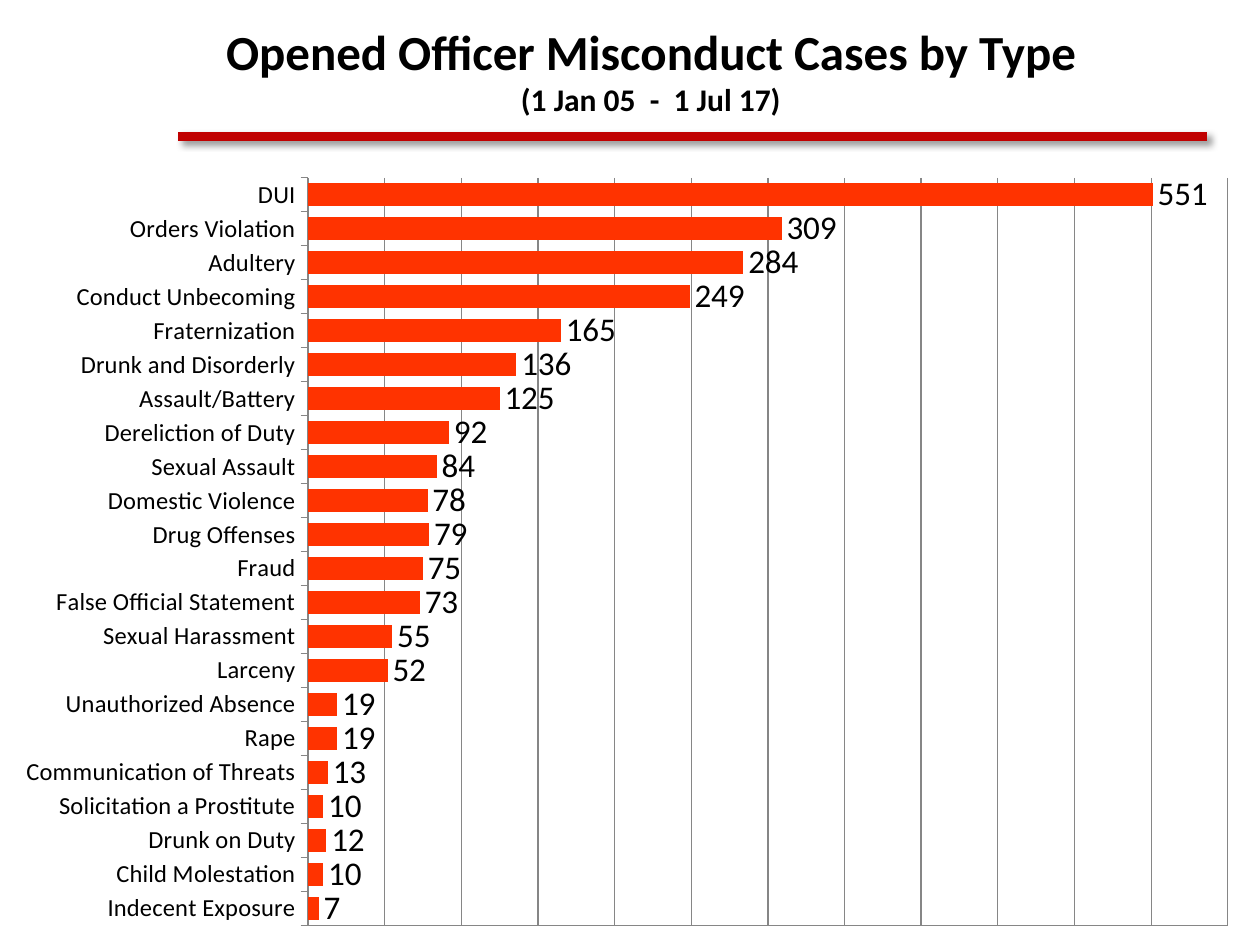
from typing import NamedTuple

from lxml import etree
from pptx import Presentation
from pptx.chart.data import CategoryChartData
from pptx.dml.color import RGBColor
from pptx.enum.chart import (XL_CHART_TYPE, XL_LABEL_POSITION, XL_TICK_LABEL_POSITION,
                             XL_TICK_MARK)
from pptx.enum.shapes import MSO_CONNECTOR
from pptx.enum.text import MSO_ANCHOR, PP_ALIGN
from pptx.oxml import parse_xml
from pptx.oxml.ns import nsdecls, qn
from pptx.util import Pt

BAR_CLUSTERED = XL_CHART_TYPE.BAR_CLUSTERED
OUTSIDE_END = XL_LABEL_POSITION.OUTSIDE_END
NO_LABELS = XL_TICK_LABEL_POSITION.NONE
TICK_NONE, TICK_IN, TICK_OUT = XL_TICK_MARK.NONE, XL_TICK_MARK.INSIDE, XL_TICK_MARK.OUTSIDE
STRAIGHT = MSO_CONNECTOR.STRAIGHT
MIDDLE = MSO_ANCHOR.MIDDLE
CENTER = PP_ALIGN.CENTER

BLACK = RGBColor(0x00, 0x00, 0x00)
RULE_RED = RGBColor(0xC0, 0x00, 0x00)
BAR_RED = RGBColor(0xFF, 0x33, 0x00)
GRAY = RGBColor(0x86, 0x86, 0x86)
FONT = "Calibri"


class TitleLine(NamedTuple):
    text: str
    size: float


class CaseType(NamedTuple):
    name: str
    count: int


TITLE = [
    TitleLine("Opened Officer Misconduct Cases by Type", 28),
    TitleLine("(1 Jan 05  -  1 Jul 17)", 18),
]

# Listed from the top bar down
CASES = [
    CaseType("DUI", 551),
    CaseType("Orders Violation", 309),
    CaseType("Adultery", 284),
    CaseType("Conduct Unbecoming", 249),
    CaseType("Fraternization", 165),
    CaseType("Drunk and Disorderly", 136),
    CaseType("Assault/Battery", 125),
    CaseType("Dereliction of Duty", 92),
    CaseType("Sexual Assault", 84),
    CaseType("Domestic Violence", 78),
    CaseType("Drug Offenses", 79),
    CaseType("Fraud", 75),
    CaseType("False Official Statement", 73),
    CaseType("Sexual Harassment", 55),
    CaseType("Larceny", 52),
    CaseType("Unauthorized Absence", 19),
    CaseType("Rape", 19),
    CaseType("Communication of Threats", 13),
    CaseType("Solicitation a Prostitute", 10),
    CaseType("Drunk on Duty", 12),
    CaseType("Child Molestation", 10),
    CaseType("Indecent Exposure", 7),
]


def style_font(font, size: float, name: str = FONT) -> None:
    font.name = name
    font.size = Pt(size)
    font.color.rgb = BLACK


def add_rule(s) -> None:
    rule = s.shapes.add_connector(STRAIGHT, Pt(102), Pt(78), Pt(690), Pt(78))
    rule.line.color.rgb = RULE_RED
    rule.line.width = Pt(5)
    rule._element.spPr.append(parse_xml(
        f'<a:effectLst {nsdecls("a")}>'
        f'<a:outerShdw blurRad="{Pt(4)}" dist="{Pt(3)}" dir="2700000" rotWithShape="0">'
        '<a:srgbClr val="000000"><a:alpha val="40000"/></a:srgbClr>'
        '</a:outerShdw></a:effectLst>'))


def add_title(s, lines: list[TitleLine]) -> None:
    sp = s.shapes.add_textbox(Pt(30), Pt(1.5), Pt(684), Pt(76.5))
    tf = sp.text_frame
    tf.word_wrap = True
    tf.vertical_anchor = MIDDLE
    for i, line in enumerate(lines):
        p = tf.add_paragraph() if i else tf.paragraphs[0]
        p.text = line.text
        p.alignment = CENTER
        style_font(p.font, line.size)
        p.font.bold = True


def set_plot_area(chart, x: float, y: float, w: float, h: float) -> None:
    """Fix the inner plot area, as fractions of the chart frame."""
    plot_area = chart._chartSpace.chart.plotArea
    for old in plot_area.findall(qn("c:layout")):
        plot_area.remove(old)
    layout = etree.Element(qn("c:layout"))
    manual = etree.SubElement(layout, qn("c:manualLayout"))
    values = {"layoutTarget": "inner", "xMode": "edge", "yMode": "edge",
              "x": x, "y": y, "w": w, "h": h}
    for tag, value in values.items():
        etree.SubElement(manual, qn(f"c:{tag}")).set("val", str(value))
    plot_area.insert(0, layout)


def add_case_chart(s, cases: list[CaseType]) -> None:
    data = CategoryChartData()
    bars = cases[::-1]
    data.categories = [case.name for case in bars]
    data.add_series("Series 1", [case.count for case in bars])
    chart = s.shapes.add_chart(BAR_CLUSTERED, Pt(-270), Pt(94.5), Pt(972), Pt(444), data).chart
    chart.has_legend = False
    chart.has_title = False
    style_font(chart.font, 18.9, "Times New Roman")
    set_plot_area(chart, 0.459, 0.016, 0.541, 0.962)

    # Bars and value labels
    plot = chart.plots[0]
    plot.gap_width = 49
    plot.vary_by_categories = False
    series = plot.series[0]
    series.format.fill.solid()
    series.format.fill.fore_color.rgb = BAR_RED
    labels = series.data_labels
    labels.show_value = True
    labels.position = OUTSIDE_END
    style_font(labels.font, 18.9)

    # Axes and gridlines
    cat_axis, val_axis = chart.category_axis, chart.value_axis
    cat_axis.major_tick_mark = TICK_OUT
    cat_axis.has_major_gridlines = False
    style_font(cat_axis.tick_labels.font, 14)
    val_axis.minimum_scale, val_axis.maximum_scale = 0, 600
    val_axis.major_unit = 50
    val_axis.major_tick_mark = TICK_IN
    val_axis.tick_label_position = NO_LABELS
    val_axis.has_major_gridlines = True
    for axis in (cat_axis, val_axis):
        axis.minor_tick_mark = TICK_NONE
    for item in (cat_axis, val_axis, val_axis.major_gridlines):
        item.format.line.color.rgb = GRAY
        item.format.line.width = Pt(0.75)


def main() -> None:
    prs = Presentation()
    prs.slide_width, prs.slide_height = Pt(720), Pt(540)
    s = prs.slides.add_slide(prs.slide_layouts[6])
    add_rule(s)
    add_title(s, TITLE)
    add_case_chart(s, CASES)
    prs.save("out.pptx")


if __name__ == "__main__":
    main()
